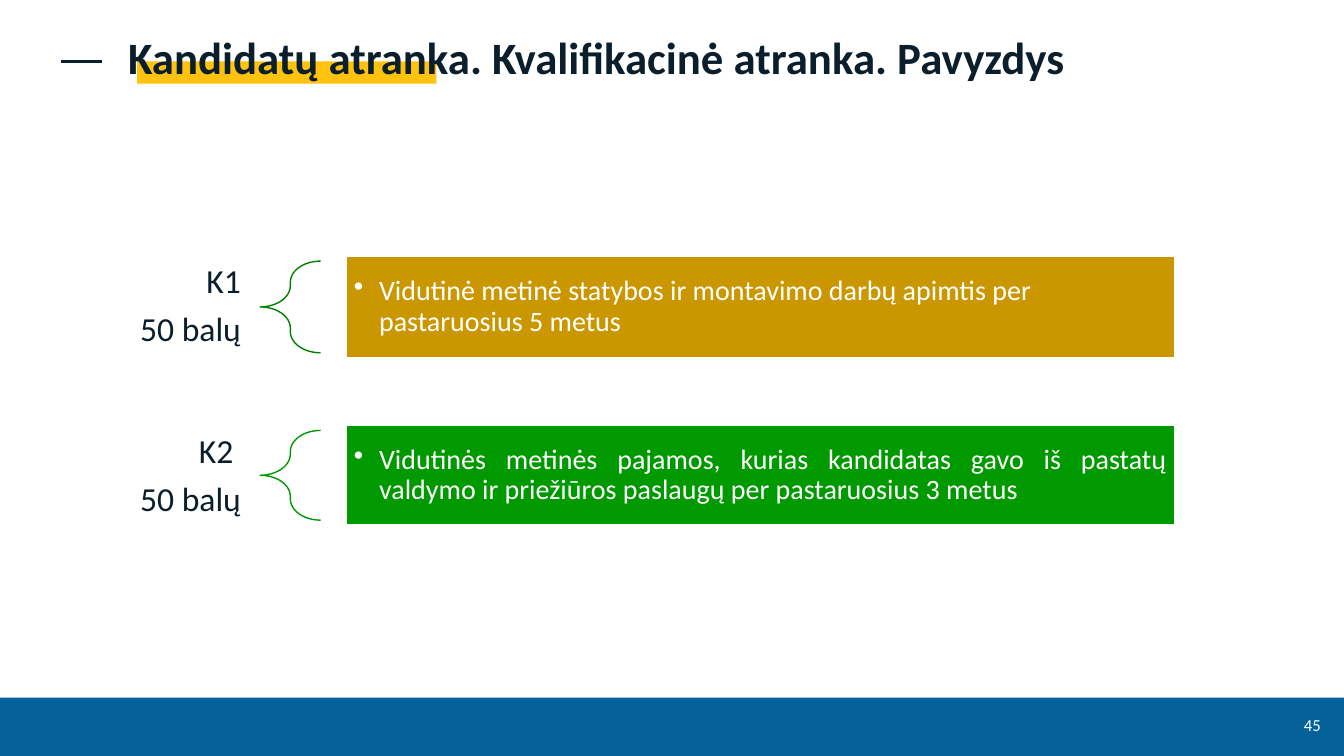
from lxml.etree import SubElement
from pptx import Presentation
from pptx.dml.color import RGBColor
from pptx.enum.shapes import MSO_CONNECTOR, MSO_SHAPE
from pptx.enum.text import MSO_ANCHOR, MSO_AUTO_SIZE, PP_ALIGN
from pptx.oxml.ns import qn
from pptx.util import Inches, Pt

COLORS = {
    "ink": "0B1E2C",
    "white": "FFFFFF",
    "footer": "04619A",
    "highlight": "FFC20E",
    "ochre": "CA9700",
    "green": "009900",
    "dark_green": "008000",
}
FONT = "Calibri"
SLIDE_WIDTH, SLIDE_HEIGHT = 13.33, 7.5

CRITERIA = [
    dict(top=2.54, height=1.01, labels=["K1", "50 balų"],
         description="Vidutinė metinė statybos ir montavimo darbų apimtis per "
                     "pastaruosius 5 metus",
         fill="ochre", brace_color="dark_green", align=PP_ALIGN.LEFT),
    dict(top=4.22, height=0.99, labels=["K2 ", "50 balų"],
         description="Vidutinės metinės pajamos, kurias kandidatas gavo iš pastatų "
                     "valdymo ir priežiūros paslaugų per pastaruosius 3 metus",
         fill="green", brace_color="green", align=PP_ALIGN.JUSTIFY),
]


def rgb(name):
    """Return the palette colour with the given name."""
    return RGBColor.from_string(COLORS[name])


def write_text(holder, lines, size, color, bold=False, align=PP_ALIGN.LEFT,
               insets=(0.1, 0.05), line_spacing=None, space_after=0, bullet=None):
    """Fill a shape's text frame with formatted paragraphs."""
    frame = holder.text_frame
    frame.word_wrap = True
    frame.auto_size = MSO_AUTO_SIZE.NONE
    frame.vertical_anchor = MSO_ANCHOR.MIDDLE
    frame.margin_left = frame.margin_right = Inches(insets[0])
    frame.margin_top = frame.margin_bottom = Inches(insets[1])
    for index, line in enumerate(lines):
        paragraph = frame.paragraphs[0] if index == 0 else frame.add_paragraph()
        if bullet:
            properties = paragraph._p.get_or_add_pPr()
            properties.set("marL", str(Inches(0.25)))
            properties.set("indent", str(Inches(-0.25)))
            SubElement(properties, qn("a:buChar")).set("char", bullet)
        paragraph.alignment = align
        paragraph.line_spacing = line_spacing
        paragraph.space_after = Pt(space_after)
        run = paragraph.add_run()
        run.text = line
        run.font.name = FONT
        run.font.size = Pt(size)
        run.font.bold = bold
        run.font.color.rgb = rgb(color)


def add_preset(slide, preset, box, fill=None, line=None):
    """Add a flat preset shape at box (left, top, width, height)."""
    preset_shape = slide.shapes.add_shape(preset, *map(Inches, box))
    preset_shape.shadow.inherit = False
    if fill:
        preset_shape.fill.solid()
        preset_shape.fill.fore_color.rgb = rgb(fill)
    else:
        preset_shape.fill.background()
    if line:
        preset_shape.line.color.rgb = rgb(line)
        preset_shape.line.width = Pt(1)
    else:
        preset_shape.line.fill.background()
    return preset_shape


def add_heading(slide, left, top, width, height):
    """Place the title with its dash and highlight bar."""
    middle = top + 0.17
    dash = slide.shapes.add_connector(
        MSO_CONNECTOR.STRAIGHT, Inches(left - 0.56), Inches(middle),
        Inches(left - 0.16), Inches(middle))
    dash.line.color.rgb = rgb("ink")
    dash.line.width = Pt(2)
    SubElement(dash._element.spPr, qn("a:effectLst"))

    highlight = add_preset(slide, MSO_SHAPE.RECTANGLE,
                           (left + 0.19, middle, 2.97, 0.22), fill="highlight")
    title = slide.shapes.title
    title.left, title.top = Inches(left), Inches(top)
    title.width, title.height = Inches(width), Inches(height)
    write_text(title, ["Kandidatų atranka. Kvalifikacinė atranka. Pavyzdys"], 32,
               "ink", bold=True, line_spacing=0.9)
    title._element.addprevious(highlight._element)


def add_footer(slide, left, top, width, height):
    """Draw the bottom band with the slide number."""
    add_preset(slide, MSO_SHAPE.RECTANGLE, (left, top, width, height), fill="footer")
    number = slide.shapes.add_textbox(
        Inches(left + width - 0.54), Inches(top + 0.07), Inches(0.41), Inches(0.4))
    write_text(number, ["45"], 12, "white", align=PP_ALIGN.RIGHT)


def add_criterion(slide, left, top, width, height, labels, description, fill,
                  brace_color, align):
    """Draw one row: score label, brace and description panel."""
    brace_left, panel_left = left + 2.58, left + 3.43
    label = slide.shapes.add_textbox(
        Inches(left), Inches(top - 0.2), Inches(brace_left - left), Inches(1.41))
    write_text(label, labels, 24, "ink", align=PP_ALIGN.RIGHT, insets=(0.19, 0.07),
               line_spacing=0.9, space_after=8.4)

    brace = add_preset(slide, MSO_SHAPE.LEFT_BRACE,
                       (brace_left, top + 0.05, 0.6, height - 0.1), line=brace_color)
    brace.adjustments[0] = 0.35

    panel = add_preset(slide, MSO_SHAPE.RECTANGLE,
                       (panel_left, top, left + width - panel_left, height),
                       fill=fill, line="white")
    write_text(panel, [description], 20, "white", align=align, insets=(0.08, 0.08),
               line_spacing=0.9, space_after=3, bullet="•")


def main():
    """Build and save the slide."""
    deck = Presentation()
    deck.slide_width, deck.slide_height = Inches(SLIDE_WIDTH), Inches(SLIDE_HEIGHT)
    slide = deck.slides.add_slide(deck.slide_layouts[5])
    add_footer(slide, 0, 6.92, SLIDE_WIDTH, 0.58)
    add_heading(slide, 1.17, 0.44, 10.48, 0.31)
    for criterion in CRITERIA:
        add_criterion(slide, left=0, width=11.65, **criterion)
    deck.save("out.pptx")


if __name__ == "__main__":
    main()
